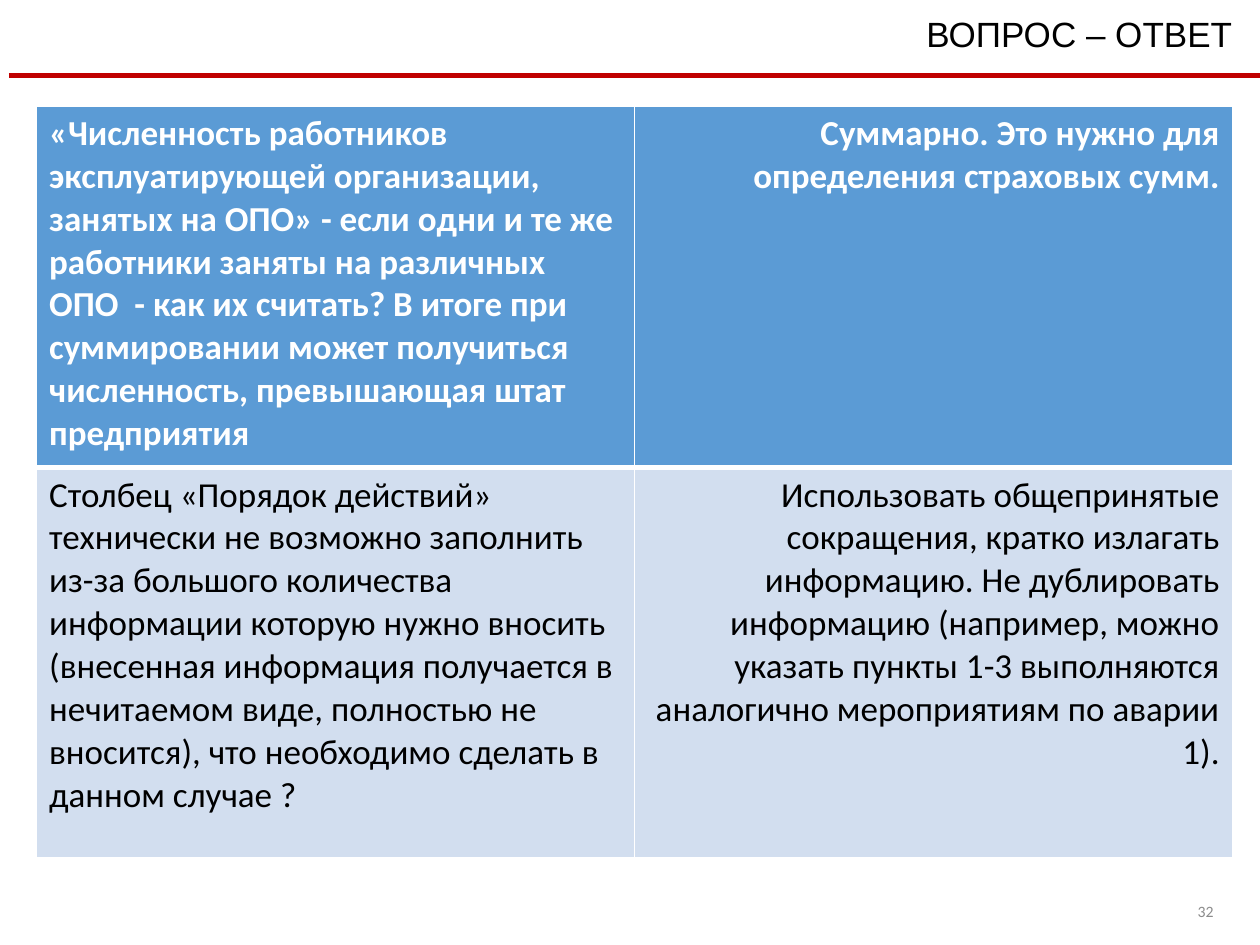
from dataclasses import dataclass

from lxml import etree
from pptx import Presentation
from pptx.dml.color import RGBColor
from pptx.enum.shapes import MSO_CONNECTOR
from pptx.enum.text import MSO_ANCHOR, MSO_AUTO_SIZE, PP_ALIGN
from pptx.oxml.ns import qn
from pptx.util import Inches, Pt


@dataclass(frozen=True)
class Theme:
    heading_font: str = "Arial"
    body_font: str = "Calibri"
    text_size: int = 20
    number_size: int = 9
    black: str = "000000"
    white: str = "FFFFFF"
    grey: str = "8C8C8C"
    red: str = "C00000"
    header_fill: str = "5B9BD5"
    body_fill: str = "D2DEEF"


def rgb(value):
    return RGBColor.from_string(value)


class SlideBuilder:
    """Holds the theme and the slide being filled."""

    def __init__(self, slide, theme):
        self.s = slide
        self.theme = theme

    def style(self, p, font, size, color, align=PP_ALIGN.LEFT, bold=False):
        p.alignment = align
        p.font.name = font
        p.font.size = Pt(size)
        p.font.bold = bold
        p.font.color.rgb = rgb(color)

    def title(self, text, x, y, w, h):
        sp = self.s.shapes.title
        sp.left, sp.top, sp.width, sp.height = map(Inches, (x, y, w, h))
        tf = sp.text_frame
        tf.text = text
        tf.vertical_anchor = MSO_ANCHOR.TOP
        tf.auto_size = MSO_AUTO_SIZE.SHAPE_TO_FIT_TEXT
        self.style(tf.paragraphs[0], self.theme.heading_font,
                   self.theme.text_size, self.theme.black, PP_ALIGN.RIGHT)

    def rule(self, x1, x2, y, width):
        line = self.s.shapes.add_connector(
            MSO_CONNECTOR.STRAIGHT, *map(Inches, (x1, y, x2, y)))
        line.line.color.rgb = rgb(self.theme.red)
        line.line.width = Pt(width)
        etree.SubElement(line._element.spPr, qn("a:effectLst"))

    def page_number(self, text, x, y, w, h):
        tf = self.s.shapes.add_textbox(*map(Inches, (x, y, w, h))).text_frame
        tf.word_wrap = True
        tf.vertical_anchor = MSO_ANCHOR.MIDDLE
        tf.text = text
        self.style(tf.paragraphs[0], self.theme.body_font,
                   self.theme.number_size, self.theme.grey, PP_ALIGN.RIGHT)

    def borders(self, cell, **widths):
        """Draw white cell edges; they must precede the fill in the XML."""
        tc_pr = cell._tc.get_or_add_tcPr()
        for i, (edge, width) in enumerate(widths.items()):
            ln = etree.Element(qn(f"a:{edge}"), w=str(Pt(width)))
            fill = etree.SubElement(ln, qn("a:solidFill"))
            etree.SubElement(fill, qn("a:srgbClr"), val=self.theme.white)
            tc_pr.insert(i, ln)

    def qa_table(self, rows, x, y, w, heights):
        """Questions on the left, answers right-aligned; row one is the header."""
        table = self.s.shapes.add_table(
            len(rows), 2, *map(Inches, (x, y, w, sum(heights)))).table
        for i, (texts, height) in enumerate(zip(rows, heights)):
            table.rows[i].height = Inches(height)
            header = i == 0
            fill = self.theme.header_fill if header else self.theme.body_fill
            color = self.theme.white if header else self.theme.black
            for j, (text, align) in enumerate(
                    zip(texts, (PP_ALIGN.LEFT, PP_ALIGN.RIGHT))):
                cell = table.cell(i, j)
                cell.text = text
                cell.fill.solid()
                cell.fill.fore_color.rgb = rgb(fill)
                self.borders(cell, lnL=1, lnR=1, lnT=1 if header else 3,
                             lnB=3 if header else 1)
                self.style(cell.text_frame.paragraphs[0], self.theme.body_font,
                           self.theme.text_size, color, align, bold=header)


QUESTIONS = [
    ("«Численность работников эксплуатирующей организации, занятых на ОПО» - "
     "если одни и те же работники заняты на различных ОПО  - как их считать? "
     "В итоге при суммировании может получиться численность, превышающая штат "
     "предприятия",
     "Суммарно. Это нужно для определения страховых сумм."),
    ("Столбец «Порядок действий» технически не возможно заполнить из-за "
     "большого количества информации которую нужно вносить (внесенная "
     "информация получается в нечитаемом виде, полностью не вносится), что "
     "необходимо сделать в данном случае ?",
     "Использовать общепринятые сокращения, кратко излагать информацию. "
     "Не дублировать информацию (например, можно указать пункты 1-3 "
     "выполняются аналогично мероприятиям по аварии 1)."),
]


def main():
    prs = Presentation()
    prs.slide_width, prs.slide_height = Inches(10), Inches(7.5)
    title_only = prs.slide_layouts[5]
    builder = SlideBuilder(prs.slides.add_slide(title_only), Theme())
    builder.page_number("32", 8.89, 7.08, 0.84, 0.3)
    builder.rule(0.07, 10.07, 0.6, 3)
    builder.title("ВОПРОС – ОТВЕТ", 0.27, 0.05, 9.61, 0.44)
    builder.qa_table(QUESTIONS, 0.29, 0.84, 9.49, (2.87, 3.1))
    prs.save("out.pptx")


if __name__ == "__main__":
    main()
